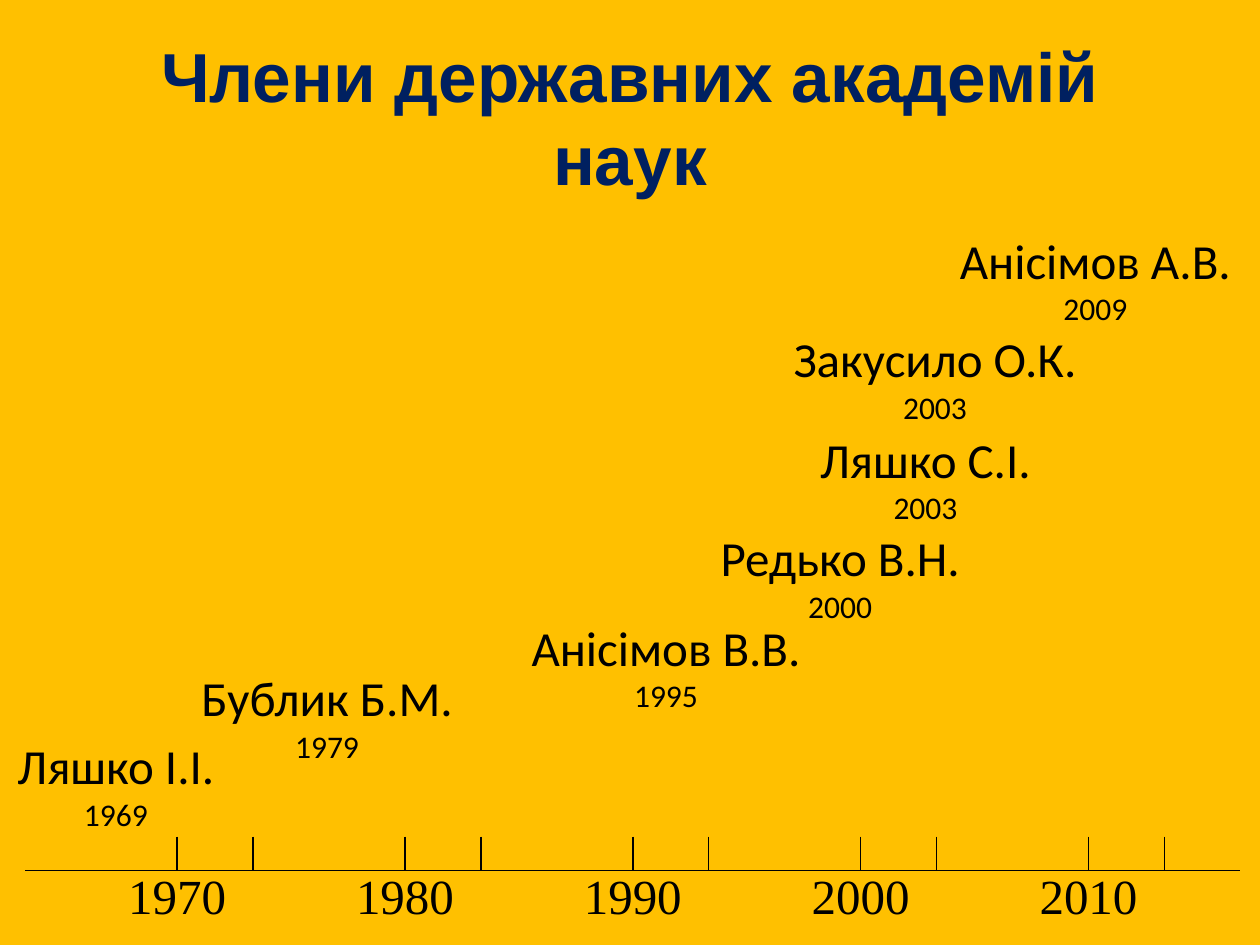
from lxml.etree import SubElement
from pptx import Presentation
from pptx.dml.color import RGBColor
from pptx.enum.text import MSO_ANCHOR, MSO_AUTO_SIZE, PP_ALIGN
from pptx.oxml.ns import qn
from pptx.util import Inches, Pt

AMBER = RGBColor(0xFF, 0xC0, 0x00)
NAVY = RGBColor(0x00, 0x20, 0x60)
BLACK = RGBColor(0x00, 0x00, 0x00)

UNIT = Inches(0.1)
DECADES = range(1970, 2011, 10)
COLUMNS_PER_DECADE = 3
NO_STYLE = "{2D5ABB26-0587-4C30-8999-92F81FD0307C}"

MEMBERS = [
    ("Ляшко І.І.", 1969, 0.4, 57.9, 18.7),
    ("Бублик Б.М.", 1979, 15, 52.5, 23.1),
    ("Анісімов В.В.", 1995, 41.2, 48.5, 24.5),
    ("Редько В.Н.", 2000, 56.2, 41.4, 22.1),
    ("Ляшко С.І.", 2003, 64.1, 33.6, 19.8),
    ("Анісімов А.В.", 2009, 75.2, 17.8, 24.7),
    ("Закусило О.К.", 2003, 62, 25.6, 25.6),
]


def write(para, text, font="Calibri", size=28, color=BLACK, bold=False, align=PP_ALIGN.CENTER):
    para.alignment = align
    span = para.add_run()
    span.text = text
    span.font.name = font
    span.font.size = Pt(size)
    span.font.bold = bold
    span.font.color.rgb = color


def draw_border(cell, side):
    line = SubElement(cell._tc.get_or_add_tcPr(), qn(f"a:ln{side}"), w=str(Pt(1)))
    fill = SubElement(line, qn("a:solidFill"))
    SubElement(fill, qn("a:srgbClr"), val=str(BLACK))


class TimelineSlide:
    def __init__(self, deck, background):
        self.page = deck.slides.add_slide(deck.slide_layouts[6])
        self.page.background.fill.solid()
        self.page.background.fill.fore_color.rgb = background

    def place(self, *cells):
        return [round(cell * UNIT) for cell in cells]

    def title(self, text, left, top, width, height):
        box = self.page.shapes.add_textbox(*self.place(left, top, width, height))
        frame = box.text_frame
        frame.word_wrap = True
        frame.vertical_anchor = MSO_ANCHOR.MIDDLE
        write(frame.paragraphs[0], text, font="Arial", size=39.6, color=NAVY, bold=True)

    def member(self, name, year, left, top, width):
        box = self.page.shapes.add_textbox(*self.place(left, top, width, 8.8))
        frame = box.text_frame
        frame.word_wrap = False
        frame.auto_size = MSO_AUTO_SIZE.SHAPE_TO_FIT_TEXT
        write(frame.paragraphs[0], name, align=PP_ALIGN.LEFT)
        write(frame.add_paragraph(), str(year), size=18)

    def axis(self, decades, left, top, width, row_heights):
        count = COLUMNS_PER_DECADE * len(decades) + 1
        area = self.place(left, top, width, sum(row_heights))
        table = self.page.shapes.add_table(2, count, *area).table
        table.first_row = table.horz_banding = False
        table._tbl.tblPr.find(qn("a:tableStyleId")).text = NO_STYLE
        for row, height in zip(table.rows, self.place(*row_heights)):
            row.height = height
        for column in table.columns:
            column.width = round(width * UNIT / count)

        for index in range(count):
            tick = table.cell(0, index)
            side = {1: "R", 2: "L"}.get(index % COLUMNS_PER_DECADE)
            if side:
                draw_border(tick, side)
            draw_border(tick, "B")

        for cell in table.iter_cells():
            cell.fill.background()
            cell.margin_left = cell.margin_right = Inches(0.07)
            cell.margin_top = cell.margin_bottom = 0

        for index, decade in enumerate(decades):
            start = COLUMNS_PER_DECADE * index + 1
            label = table.cell(1, start)
            label.merge(table.cell(1, start + 1))
            para = label.text_frame.paragraphs[0]
            para.space_before = Pt(6)
            write(para, str(decade), font="Times New Roman")

        for cell in table.iter_cells():
            if not cell.text:
                SubElement(cell.text_frame.paragraphs[0]._p, qn("a:endParaRPr"), sz="800")


def main():
    deck = Presentation()
    deck.slide_width, deck.slide_height = 100 * UNIT, 75 * UNIT
    slide = TimelineSlide(deck, AMBER)
    slide.title("Члени державних академій наук", 5, 3, 90, 12.5)
    slide.axis(DECADES, 2, 66.4, 96.5, (2.7, 4.7))
    for member in MEMBERS:
        slide.member(*member)
    deck.save("out.pptx")


if __name__ == "__main__":
    main()
